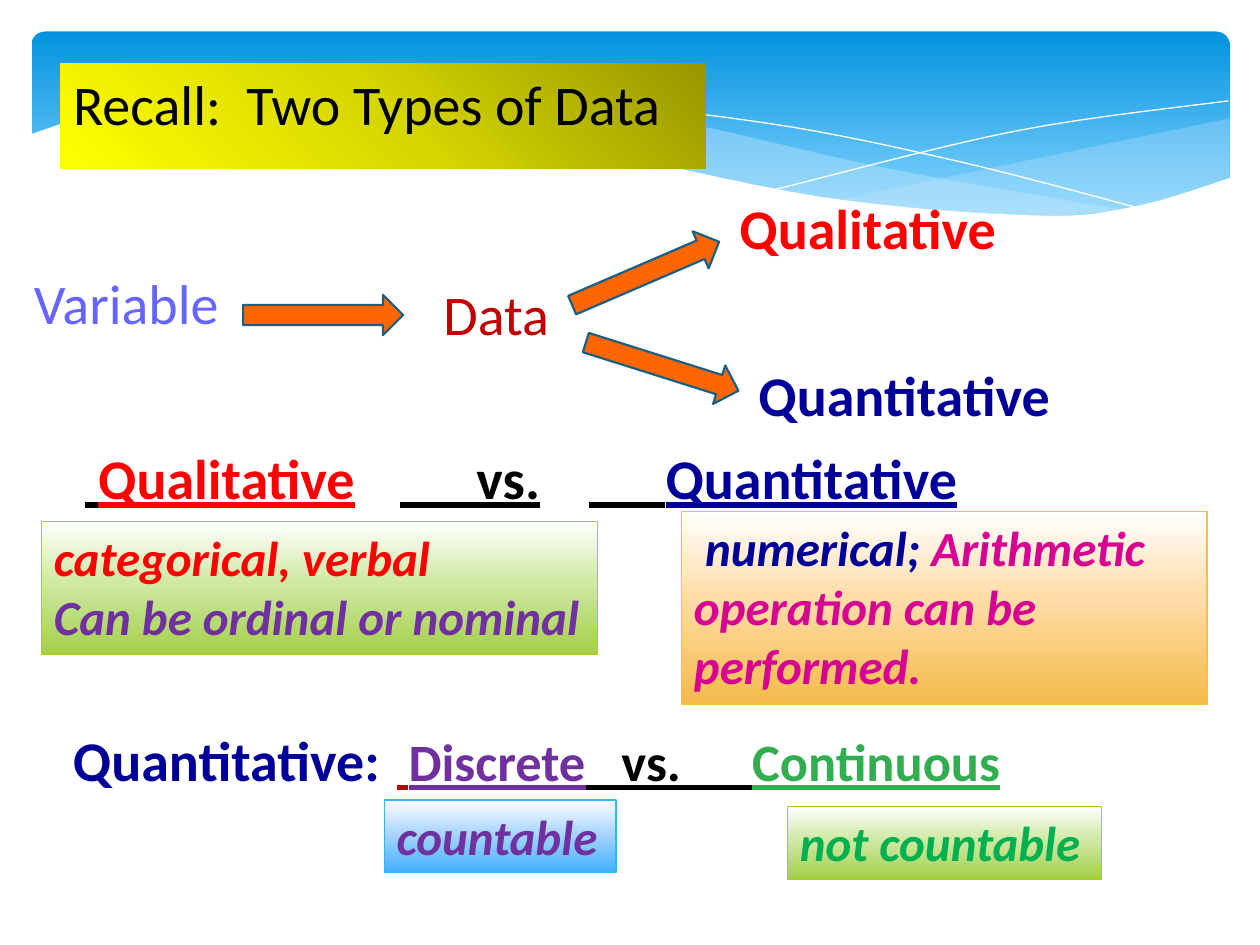
import pptx
import pptx.util
import pptx.dml.color
import pptx.enum.shapes
import pptx.enum.text
import pptx.oxml
import pptx.oxml.ns

COLORS = {
    "sky": "0293E0", "pale_sky": "83D3FE", "mist": "C6E7FC", "white": "FFFFFF",
    "olive": "979700", "mustard": "D7D700", "yellow": "FFFF00",
    "black": "000000", "red": "FF0000", "dark_red": "C00000", "lilac": "6666FF",
    "navy": "000099", "purple": "7030A0", "magenta": "D60093",
    "leaf": "32AE51", "green": "00B050", "orange": "FF6600", "arrow_edge": "195F84",
    "lime_mid": "D1EAA7", "lime": "A4CF4A", "lime_edge": "A5D028",
    "gold_mid": "FFDDAA", "gold": "F4BB4A", "gold_edge": "F5C040",
    "blue_mid": "ACD7FF", "blue": "42B0FD", "blue_edge": "31B6FD",
}
RGB = {name: pptx.dml.color.RGBColor.from_string(c) for name, c in COLORS.items()}
SHAPE = pptx.enum.shapes.MSO_SHAPE
Pt = pptx.util.Pt

prs = pptx.Presentation()
prs.slide_width, prs.slide_height = pptx.util.Inches(10), pptx.util.Inches(7.5)
U = prs.slide_width // 100  # grid of 100 columns by 75 rows
s = prs.slides.add_slide(prs.slide_layouts[5])


def write(p, text, color="black", size=32, bold=True, italic=False, underline=False):
    r = p.add_run()
    r.text = text
    f = r.font
    f.name, f.size, f.color.rgb = "Calibri", Pt(size), RGB[color]
    f.bold, f.italic, f.underline = bold, italic, underline


def gradient(sp, angle, stops):
    sp.fill.gradient()
    sp.fill.gradient_angle = -angle % 360
    gs_list = sp._element.spPr.find(".//" + pptx.oxml.ns.qn("a:gsLst"))
    for gs in list(gs_list):
        gs_list.remove(gs)
    for pos, color in stops:
        gs_list.append(pptx.oxml.parse_xml(
            f'<a:gs {pptx.oxml.ns.nsdecls("a")} pos="{pos * 1000}">'
            f'<a:srgbClr val="{COLORS[color]}"/></a:gs>'))


# Blue banner
sp = s.shapes.add_shape(SHAPE.ROUNDED_RECTANGLE, *[int(v * U) for v in (2.5, 2.5, 95.1, 15.6)])
sp.adjustments[0] = 0.07
sp.shadow.inherit = False
sp.line.fill.background()
gradient(sp, 90, [(0, "sky"), (90, "pale_sky")])

# Waves: smooth edges through a few knots, fill (none for a thin white curve), opacity
waves = [
    ([[(97.6, 9.4), (86, 11.8), (66, 16)],
      [(66, 16), (79, 17.2), (89, 16.6), (97.6, 14.1)]], "mist", 29),
    ([[(89.3, 16.7), (70.6, 13.4), (54, 9.7), (42, 8.2), (28.6, 8.6)],
      [(28.6, 8.6), (45, 11.6), (60, 15), (77, 17.2), (89.3, 16.7)]], "mist", 40),
    ([[(31, 9), (45, 8.2), (61, 9.8), (76, 12.8), (90.7, 16.6)]], None, 100),
    ([[(61.3, 15.1), (80.6, 10.4), (97.5, 8)]], None, 100),
    ([[(97.7, 14.1), (90, 16.4), (82, 17.1), (65, 15.6), (45, 11.4), (31.6, 8.8),
       (17.7, 7.8), (9.5, 8.5), (2.3, 10.7)], [(2.3, 22.4), (97.7, 22.4)]], "white", 100),
]
STEPS = 8
for edges, fill, opacity in waves:
    points = []
    for knots in edges:
        ends = [knots[0], *knots, knots[-1]]
        for a, b, c, d in zip(ends, ends[1:], ends[2:], ends[3:]):
            for t in (i / STEPS for i in range(STEPS + 1)):
                # Catmull-Rom spline between knots b and c
                points.append([U / 2 * (2 * q + (r - p) * t + (2 * p - 5 * q + 4 * r - v) * t**2
                                        + (3 * q - p - 3 * r + v) * t**3)
                               for p, q, r, v in zip(a, b, c, d)])
    builder = s.shapes.build_freeform(*points[0])
    builder.add_line_segments(points[1:], close=fill is not None)
    sp = builder.convert_to_shape()
    sp.shadow.inherit = False
    if fill:
        sp.line.fill.background()
        sp.fill.solid()
        sp.fill.fore_color.rgb = RGB[fill]
        clr = sp._element.spPr.find(".//" + pptx.oxml.ns.qn("a:srgbClr"))
        clr.append(pptx.oxml.parse_xml(
            f'<a:alpha {pptx.oxml.ns.nsdecls("a")} val="{opacity * 1000}"/>'))
    else:
        sp.fill.background()
        sp.line.color.rgb = RGB["white"]
        sp.line.width = 0

# Title, brought in front of the banner
title = s.shapes.title
s.shapes._spTree.append(title._element)
title.left, title.top, title.width, title.height = [int(v * U) for v in (4.8, 5, 51.2, 6.4)]
gradient(title, 135, [(0, "olive"), (50, "mustard"), (100, "yellow")])

# Arrows from variable to data to its two types
for x, y, angle in [(19.3, 23.4, 0), (46.2, 27.5, 17.5), (44.9, 20.1, -23.3)]:
    sp = s.shapes.add_shape(SHAPE.RIGHT_ARROW, *[int(v * U) for v in (x, y, 12.7, 3.2)])
    sp.rotation = angle
    sp.shadow.inherit = False
    sp.fill.solid()
    sp.fill.fore_color.rgb = RGB["orange"]
    sp.line.color.rgb = RGB["arrow_edge"]
    sp.line.width = Pt(1.25)

# Texts: left, top, width, lines, wrap, box colour, format, paragraphs of (text, colour) runs
plain, strong = {"size": 32, "bold": False}, {"size": 32}
heading, small_heading = {"size": 32, "underline": True}, {"size": 30, "underline": True}
note = {"size": 28, "italic": True}
texts = [
    (1.7, 20.8, 17.3, 1, False, None, plain, [[("Variable", "lilac")]]),
    (34.2, 21.7, 10.9, 1, False, None, plain, [[("Data", "dark_red")]]),
    (57.7, 14.9, 23.1, 1, False, None, strong, [[("Qualitative", "red")]]),
    (59.2, 28.1, 26.1, 1, False, None, strong, [[("Quantitative", "navy")]]),
    (5.8, 34.7, 83.2, 1, True, None, heading,
     [[(" ", "black"), ("Qualitative", "red"), ("\t      vs.\t      ", "black"),
       ("Quantitative", "navy")]]),
    (3.3, 41.4, 44.1, 2, False, "lime", note,
     [[("categorical, verbal", "red")], [("Can be ordinal or nominal", "purple")]]),
    (54.1, 40.6, 41.7, 3, True, "gold", note,
     [[(" numerical; ", "navy"), ("Arithmetic", "magenta")],
      [("operation can be performed.", "magenta")]]),
    (4.8, 57.1, 28.2, 1, False, None, strong, [[("Quantitative:", "navy")]]),
    (30.5, 57.4, 67.9, 1, True, None, small_heading,
     [[(" ", "dark_red"), ("Discrete\t", "purple"), ("   vs.      ", "black"),
       ("Continuous", "leaf")]]),
    (30.5, 63.5, 18.4, 1, False, "blue", note, [[("countable", "purple")]]),
    (62.5, 64, 24.9, 1, False, "lime", note, [[("not countable", "green")]]),
]
frames = [(title, False, plain, [[("Recall:  Two Types of Data", "black")]])]
for x, y, width, lines, wrap, box, style, paragraphs in texts:
    height = 1 + lines * style["size"] * 0.17  # insets plus line heights
    place = [int(v * U) for v in (x, y, width, height)]
    if box:
        sp = s.shapes.add_shape(SHAPE.RECTANGLE, *place)
        sp.shadow.inherit = False
        gradient(sp, 90, [(0, "white"), (44, box + "_mid"), (100, box)])
        sp.line.color.rgb = RGB[box + "_edge"]
        sp.line.width = Pt(0.75)
    else:
        sp = s.shapes.add_textbox(*place)
    frames.append((sp, wrap, style, paragraphs))

for sp, wrap, style, paragraphs in frames:
    tf = sp.text_frame
    tf.word_wrap = wrap
    tf.auto_size = pptx.enum.text.MSO_AUTO_SIZE.SHAPE_TO_FIT_TEXT
    tf.vertical_anchor = pptx.enum.text.MSO_ANCHOR.TOP
    for i, runs in enumerate(paragraphs):
        p = tf.add_paragraph() if i else tf.paragraphs[0]
        p.alignment = pptx.enum.text.PP_ALIGN.LEFT
        for text, color in runs:
            write(p, text, color, **style)

prs.save("out.pptx")
